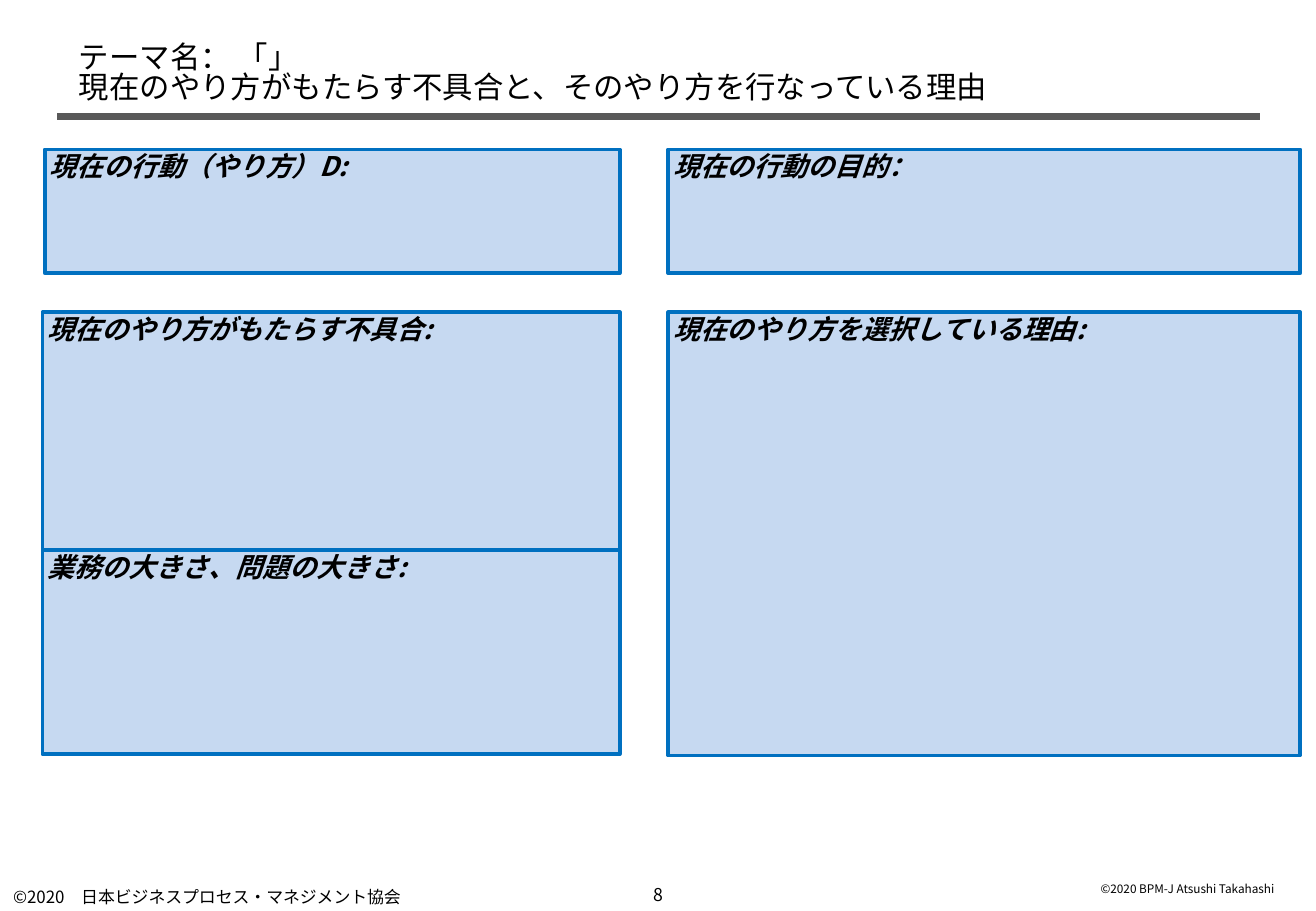
from lxml import etree
from pptx import Presentation
from pptx.dml.color import RGBColor
from pptx.enum import shapes, text
from pptx.oxml.ns import qn
from pptx.util import Inches, Pt

FONT = "Noto Sans CJK JP"
COLORS = {"ink": "000000", "fill": "C6D9F1", "edge": "0070C0", "rule": "595959"}
TITLE = "テーマ名： 「」\n現在のやり方がもたらす不具合と、そのやり方を行なっている理由"
PANELS = [
    ("現在の行動（やり方）D:", 0.37, 1.23, 4.73, 1.02),
    ("現在の行動の目的：", 5.5, 1.23, 5.2, 1.02),
    ("現在のやり方がもたらす不具合:", 0.35, 2.57, 4.75, 1.96),
    ("業務の大きさ、問題の大きさ:", 0.35, 4.53, 4.75, 1.68),
    ("現在のやり方を選択している理由:", 5.5, 2.57, 5.2, 3.65),
]
LEFT, MID = text.PP_ALIGN.LEFT, text.PP_ALIGN.CENTER
FOOTERS = [
    ("©2020\u3000日本ビジネスプロセス・マネジメント協会".replace("\u3000", "　"),
     (0.01, 7.26, 4.62, 0.24), 10, LEFT),
    ("8", (5.05, 7.22, 0.73, 0.28), 10.5, MID),
    ("©2020 BPM-J Atsushi Takahashi", (8.96, 7.21, 1.76, 0.22), 7, LEFT),
]


def color(name):
    return RGBColor.from_string(COLORS[name])


def write(frame, words, size, align=LEFT, bold=False):
    para = frame.paragraphs[0]
    para.text = words
    para.alignment = align
    font = para.font
    font.name, font.size = FONT, Pt(size)
    font.bold = font.italic = bold
    font.color.rgb = color("ink")
    latin = para._p.pPr.find(qn("a:defRPr")).find(qn("a:latin"))
    east = etree.Element(qn("a:ea"), typeface=FONT)
    latin.addnext(east)
    return para


def main():
    deck = Presentation()
    deck.slide_width, deck.slide_height = Inches(10.83), Inches(7.5)
    slide = deck.slides.add_slide(deck.slide_layouts[5])

    title = slide.shapes.title
    title.left, title.top = Inches(0.55), Inches(0.44)
    title.width, title.height = Inches(9.75), Inches(0.47)
    frame = title.text_frame
    frame.auto_size = text.MSO_AUTO_SIZE.NONE
    frame.vertical_anchor = text.MSO_ANCHOR.BOTTOM
    write(frame, TITLE, 18).line_spacing = 0.82

    rule = slide.shapes.add_connector(
        shapes.MSO_CONNECTOR.STRAIGHT,
        Inches(0.47), Inches(0.96), Inches(10.37), Inches(0.96))
    rule.line.color.rgb = color("rule")
    rule.line.width = Pt(4.25)
    etree.SubElement(rule._element.spPr, qn("a:effectLst"))

    for words, *box in PANELS:
        panel = slide.shapes.add_shape(
            shapes.MSO_SHAPE.RECTANGLE, *map(Inches, box))
        panel.shadow.inherit = False
        panel.fill.solid()
        panel.fill.fore_color.rgb = color("fill")
        panel.line.color.rgb = color("edge")
        panel.line.width = Pt(2.25)
        frame = panel.text_frame
        frame.margin_left = frame.margin_right = Inches(0.04)
        frame.margin_top = frame.margin_bottom = 0
        frame.vertical_anchor = text.MSO_ANCHOR.TOP
        write(frame, words, 16, bold=True)

    for words, box, size, align in FOOTERS:
        frame = slide.shapes.add_textbox(*map(Inches, box)).text_frame
        frame.word_wrap = True
        frame.vertical_anchor = text.MSO_ANCHOR.MIDDLE
        write(frame, words, size, align)

    deck.save("out.pptx")


if __name__ == "__main__":
    main()
